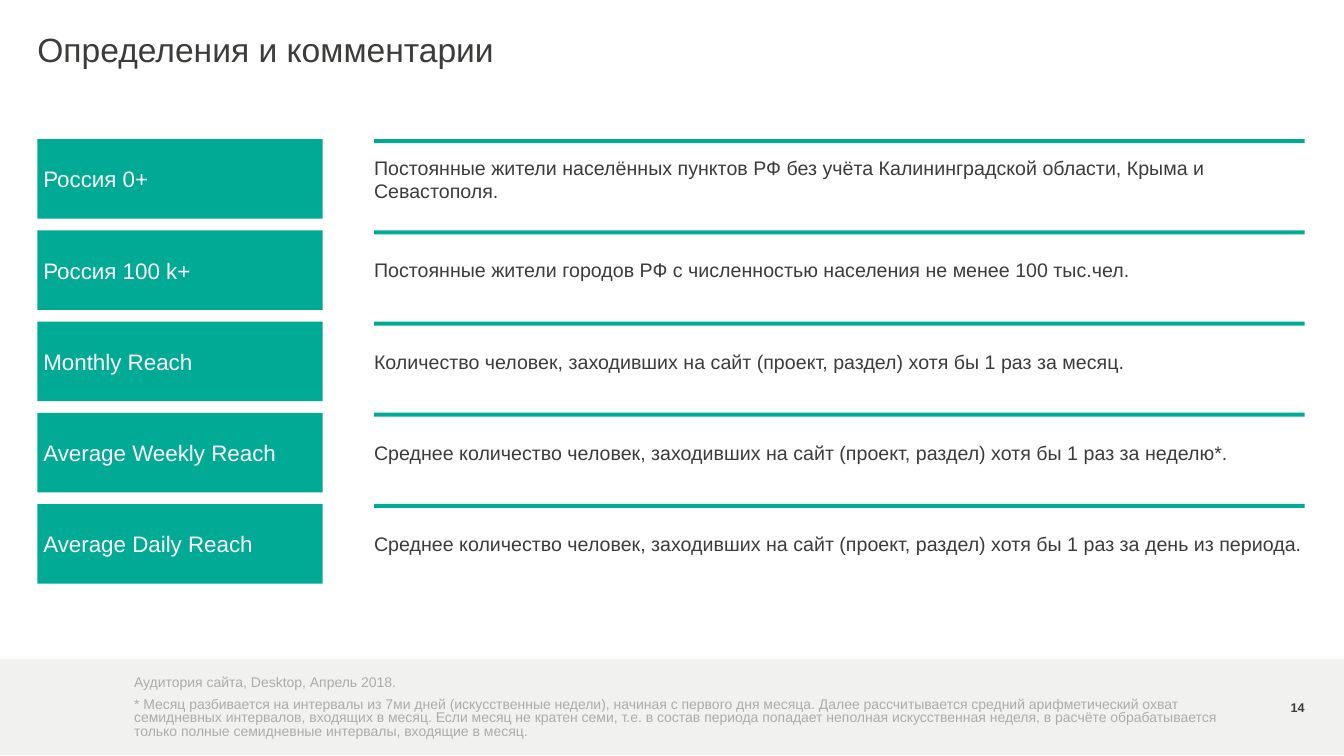
from pptx import Presentation
from pptx.dml.color import RGBColor
from pptx.enum.shapes import MSO_SHAPE as Shape
from pptx.enum.text import MSO_ANCHOR as Anchor, MSO_AUTO_SIZE as Fit, PP_ALIGN as Align
from pptx.util import Inches, Pt

WIDE, HIGH = 13.33, 7.5
LEFT, TERM_W = 0.37, 2.83
TEXT_X, TEXT_W = 3.71, 9.23
TOP, LAST, ROW_H, RULE_H = 1.38, 5, 0.79, 0.04
NOTE_X, NOTE_W = 1.33, 11.02
TEAL, DARK, GREY, PALE, WHITE = "00AA95", "3C3C3B", "ACACAB", "F1F1F0", "FFFFFF"

TERMS = [
    ("Россия 0+",
     "Постоянные жители населённых пунктов РФ без учёта Калининградской области, "
     "Крыма и Севастополя."),
    ("Россия 100 k+",
     "Постоянные жители городов РФ с численностью населения не менее 100 тыс.чел."),
    ("Monthly Reach",
     "Количество человек, заходивших на сайт (проект, раздел) хотя бы 1 раз за месяц."),
    ("Average Weekly Reach",
     "Среднее количество человек, заходивших на сайт (проект, раздел) хотя бы "
     "1 раз за неделю*."),
    ("Average Daily Reach",
     "Среднее количество человек, заходивших на сайт (проект, раздел) хотя бы "
     "1 раз за день из периода."),
]
PITCH = (LAST - TOP) / (len(TERMS) - 1)
SOURCE = "Аудитория сайта, Desktop, Апрель 2018."
NOTE = (
    "* Месяц разбивается на интервалы из 7ми дней (искусственные недели), начиная "
    "с первого дня месяца. Далее рассчитывается средний арифметический охват "
    "семидневных интервалов, входящих в месяц. Если месяц не кратен семи, т.е. "
    "в состав периода попадает неполная искусственная неделя, в расчёте "
    "обрабатывается только полные семидневные интервалы, входящие в месяц."
)


def paint(color, hue):
    color.rgb = RGBColor.from_string(hue)


def inches(*sizes):
    return [Inches(size) for size in sizes]


def write(shape, text, size, hue, anchor=Anchor.TOP, align=Align.LEFT,
          inset=0, lines=None, bold=False):
    """Fill a shape's text frame with one formatted paragraph."""
    frame = shape.text_frame
    frame.word_wrap = True
    frame.auto_size = Fit.NONE
    frame.vertical_anchor = anchor
    frame.margin_left = Inches(inset)
    frame.margin_top = frame.margin_right = frame.margin_bottom = 0
    para = frame.paragraphs[0]
    para.alignment = align
    if lines:
        para.line_spacing = lines
    run = para.add_run()
    run.text = text
    run.font.name = "Arial"
    run.font.size = Pt(size)
    run.font.bold = bold
    paint(run.font.color, hue)


def block(slide, x, y, w, h, hue):
    shape = slide.shapes.add_shape(Shape.RECTANGLE, *inches(x, y, w, h))
    shape.shadow.inherit = False
    shape.fill.solid()
    paint(shape.fill.fore_color, hue)
    shape.line.fill.background()
    return shape


def label(slide, x, y, w, h, *args, **style):
    write(slide.shapes.add_textbox(*inches(x, y, w, h)), *args, **style)


def head(slide, text):
    title = slide.shapes.title
    title.left, title.top, title.width, title.height = inches(
        LEFT, 0.33, TEXT_X + TEXT_W - LEFT, 0.58)
    write(title, text, 24, DARK, lines=Pt(26))


def entry(slide, row, term, text):
    """Draw a term, its rule and its definition on one grid row."""
    y = TOP + row * PITCH
    block(slide, TEXT_X, y, TEXT_W, RULE_H, TEAL)
    write(block(slide, LEFT, y, TERM_W, ROW_H, TEAL), term, 16, WHITE,
          Anchor.MIDDLE, inset=0.06)
    label(slide, TEXT_X, y, TEXT_W, ROW_H, text, 14, DARK, Anchor.MIDDLE)


def foot(slide):
    block(slide, 0, 6.54, WIDE, 0.95, PALE)
    label(slide, NOTE_X, 6.68, NOTE_W, 0.18, SOURCE, 10, GREY)
    label(slide, NOTE_X, 6.93, NOTE_W, 0.42, NOTE, 10, GREY, lines=0.8)
    label(slide, 12.49, 6.93, 0.45, 0.18, "14", 9, DARK, Anchor.MIDDLE,
          Align.RIGHT, bold=True)


def main():
    deck = Presentation()
    deck.slide_width, deck.slide_height = inches(WIDE, HIGH)
    slide = deck.slides.add_slide(deck.slide_layouts.get_by_name("Title Only"))
    head(slide, "Определения и комментарии")
    for row, (term, text) in enumerate(TERMS):
        entry(slide, row, term, text)
    foot(slide)
    deck.save("out.pptx")


if __name__ == "__main__":
    main()
